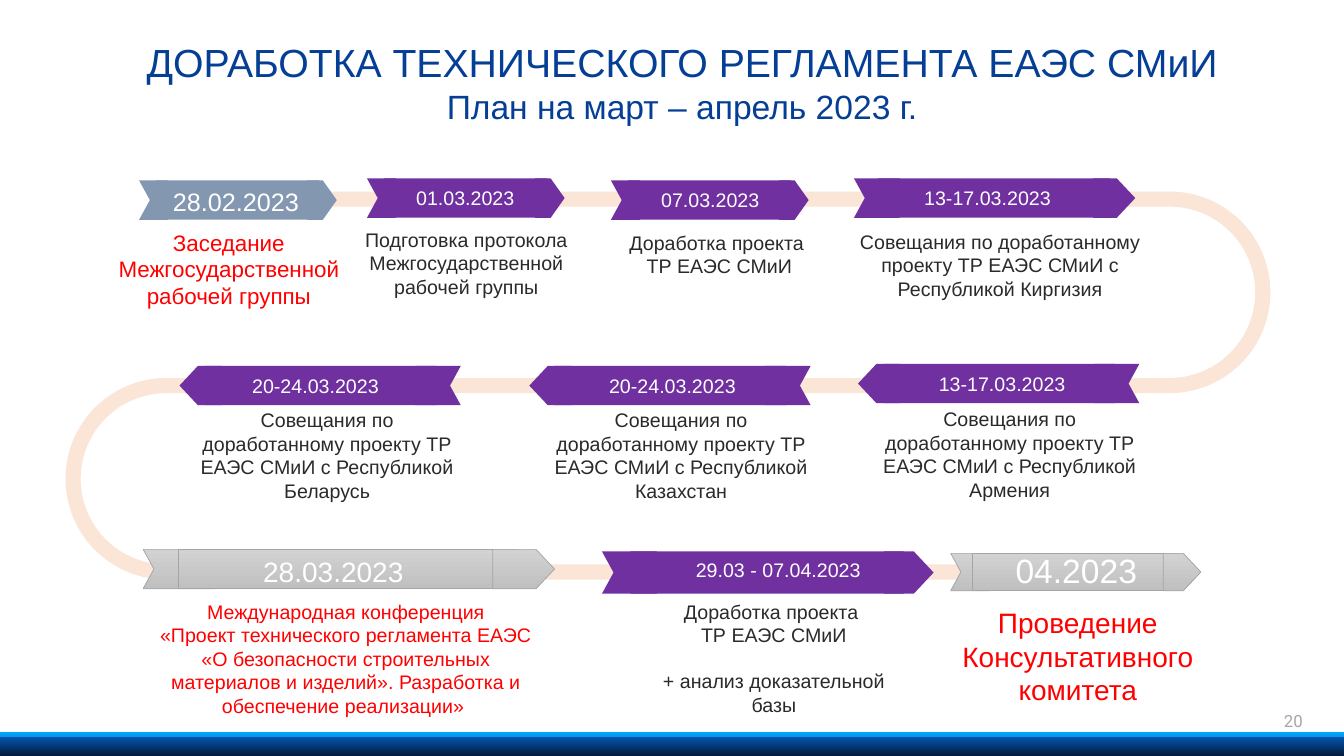
import math

import pptx
import pptx.dml.color
import pptx.enum.shapes
import pptx.enum.text
import pptx.util

PX = 9144  # EMU in one px, 100 px to the inch
SHAPE = pptx.enum.shapes.MSO_SHAPE
ALIGN = pptx.enum.text.PP_ALIGN
ANCHOR = pptx.enum.text.MSO_ANCHOR

NAVY, WHITE, INK, RED = "053E95", "FFFFFF", "292A2B", "FF0000"
PURPLE, STEEL, PEACH = "7030A0", "8497B0", "FBE5D6"
SILVER, SILVER_LINE = ("D2D2D2", "C0C0C0"), "A5A5A5"

DATE = {"size": 14, "color": WHITE}
PLAIN = {"size": 14, "color": INK}
MEETING = "Совещания по доработанному проекту ТР ЕАЭС СМиИ с Республикой "
REVISION = ["Доработка проекта ", "ТР ЕАЭС СМиИ"]

# banner box, fill, points left, then texts: (box relative to the banner, paragraphs, format)
STEPS = [
    ((138, 179, 196, 39), STEEL, False, [
        ((4, 1, 184, 40), ["28.02.2023"], {"size": 18, "color": WHITE}),
        ((-43, 43, 264, 91), ["Заседание", "Межгосударственной рабочей группы"],
         {"size": 16, "color": RED})]),
    ((364, 177, 196, 39), PURPLE, False, [
        ((28, 3, 139, 34), ["01.03.2023"], DATE),
        ((-27, 44, 251, 81),
         ["Подготовка протокола Межгосударственной рабочей группы"], PLAIN)]),
    ((606, 179, 196, 39), PURPLE, False, [
        ((29, 3, 139, 34), ["07.03.2023"], DATE),
        ((-18, 45, 251, 57), REVISION, PLAIN)]),
    ((847, 177, 279, 39), PURPLE, False, [
        ((15, 3, 235, 34), ["13-17.03.2023"], DATE),
        ((-17, 46, 324, 81), [MEETING + "Киргизия"], PLAIN)]),
    ((851, 361, 279, 39), PURPLE, True, [
        ((28, 3, 230, 34), ["13-17.03.2023"], DATE),
        ((4, 38, 293, 104), [MEETING + "Армения"], PLAIN)]),
    ((525, 363, 279, 39), PURPLE, True, [
        ((27, 3, 230, 34), ["20-24.03.2023"], DATE),
        ((4, 37, 293, 104), [MEETING + "Казахстан"], PLAIN)]),
    ((178, 363, 279, 39), PURPLE, True, [
        ((20, 3, 230, 34), ["20-24.03.2023"], DATE),
        ((0, 37, 293, 104), [MEETING + "Беларусь"], PLAIN)]),
    ((142, 545, 408, 39), SILVER, False, [
        ((8, 0, 369, 44), ["28.03.2023 "], {"size": 20, "color": WHITE}),
        ((-5, 45, 412, 128),
         ["Международная конференция",
          "«Проект технического регламента ЕАЭС «О безопасности строительных "
          "материалов и изделий». Разработка и обеспечение реализации» "],
         {"size": 14, "color": RED})]),
    ((597, 547, 329, 42), PURPLE, False, [
        ((33, 2, 284, 34), ["29.03 - 07.04.2023"], DATE),
        ((45, 43, 251, 57), REVISION, PLAIN),
        ((45, 112, 251, 57), ["+ анализ доказательной базы"], PLAIN)]),
    ((943, 549, 248, 37), SILVER, False, [
        ((16, -8, 217, 50), ["04.2023"], {"size": 24, "color": WHITE}),
        ((-16, 47, 284, 111), ["Проведение", "Консультативного комитета"],
         {"size": 20, "color": RED})]),
]


def rgb(value):
    return pptx.dml.color.RGBColor.from_string(value)


def emu(box):
    return [round(length * PX) for length in box]


def format_run(run, size, color, name="Arial"):
    run.font.color.rgb = rgb(color)
    values = {"size": pptx.util.Pt(size), "name": name, "bold": False}
    for attribute, value in values.items():
        setattr(run.font, attribute, value)


def paint(shape, fill, line=None):
    """Fill with one colour, or with a (top, bottom) pair as a gradient."""
    shape.shadow.inherit = False
    if isinstance(fill, tuple):
        shape.fill.gradient()
        shape.fill.gradient_angle = 270
        for stop, color in zip(shape.fill.gradient_stops, fill):
            stop.color.rgb = rgb(color)
    else:
        shape.fill.solid()
        shape.fill.fore_color.rgb = rgb(fill)
    if line:
        shape.line.color.rgb = rgb(line)
        shape.line.width = pptx.util.Pt(0.5)
    else:
        shape.line.fill.background()


def add_text(slide, box, paragraphs, text_format, alignment=ALIGN.CENTER, anchor=ANCHOR.TOP):
    frame = slide.shapes.add_textbox(*emu(box)).text_frame
    frame.word_wrap = True
    frame.vertical_anchor = anchor
    for index, text in enumerate(paragraphs):
        paragraph = frame.add_paragraph() if index else frame.paragraphs[0]
        paragraph.alignment = alignment
        run = paragraph.add_run()
        run.text = text
        format_run(run, **text_format)


def add_footer(slide, box):
    """Two overlapping gradient bars."""
    left, top, width, height = box
    for offset, colors in ((0, ("03ACFC", "0156B0")), (5, ("0156B0", "051A3D"))):
        bar = slide.shapes.add_shape(
            SHAPE.RECTANGLE, *emu((left, top + offset, width, height - 5)))
        paint(bar, colors)


def add_title(slide, box):
    title = slide.shapes.title
    for attribute, value in zip(("left", "top", "width", "height"), emu(box)):
        setattr(title, attribute, value)
    frame = title.text_frame
    frame.auto_size = pptx.enum.text.MSO_AUTO_SIZE.NONE
    frame.vertical_anchor = ANCHOR.MIDDLE
    paragraph = frame.paragraphs[0]
    paragraph.alignment = ALIGN.CENTER
    heading = paragraph.add_run()
    heading.text = "ДОРАБОТКА ТЕХНИЧЕСКОГО РЕГЛАМЕНТА ЕАЭС СМиИ"
    paragraph.add_line_break()
    subheading = paragraph.add_run()
    subheading.text = "План на март – апрель 2023 г."
    format_run(heading, 28, NAVY)
    format_run(subheading, 24, NAVY)


def arc(center_x, center_y, radius, start, end):
    steps = 48
    angles = [math.radians(start + (end - start) * i / steps) for i in range(steps + 1)]
    return [(center_x + radius * math.cos(a), center_y + radius * math.sin(a)) for a in angles]


def add_road(slide, box, thickness=15):
    """A band that runs right, turns back left, then turns right again."""
    left, top, width, height = box
    half = thickness / 2
    radius = (height - thickness) / 4
    right_turn = left + width - radius - half
    left_turn = left + radius + half
    first_row = top + half

    def edge(offset):
        return ([(left + 90, first_row - offset)]
                + arc(right_turn, first_row + radius, radius + offset, -90, 90)
                + arc(left_turn, first_row + 3 * radius, radius - offset, -90, -270)
                + [(left + 1104, first_row + 4 * radius - offset)])

    points = [emu(point) for point in edge(half) + edge(-half)[::-1]]
    builder = slide.shapes.build_freeform(*points[0])
    builder.add_line_segments(points[1:], close=True)
    paint(builder.convert_to_shape(), PEACH)


def add_banner(slide, box, fill, points_left):
    """Notched tail, body and arrow tip, as shares of the banner's width."""
    left, top, width, height = box
    group = slide.shapes.add_group_shape()
    parts = ((SHAPE.CHEVRON, 0, 0.2, 0.274), (SHAPE.RECTANGLE, 0.086, 0.824, None),
             (SHAPE.PENTAGON, 0.85, 0.15, 0.469))
    for kind, start, share, adjustment in parts:
        if points_left:
            start = 1 - start - share
        part = group.shapes.add_shape(
            kind, *emu((left + start * width, top, share * width, height)))
        part.rotation = 180 if points_left else 0
        if adjustment:
            part.adjustments[0] = adjustment
        paint(part, fill, SILVER_LINE if fill == SILVER else None)


def add_step(slide, box, fill, points_left, texts):
    add_banner(slide, box, fill, points_left)
    for (x, y, width, height), paragraphs, text_format in texts:
        add_text(slide, (box[0] + x, box[1] + y, width, height), paragraphs, text_format)


def main():
    presentation = pptx.Presentation()
    presentation.slide_width, presentation.slide_height = emu((1333, 750))
    slide = presentation.slides.add_slide(presentation.slide_layouts[5])
    add_footer(slide, (0, 726, 1333, 24))
    add_title(slide, (49, 15, 1255, 133))
    add_road(slide, (65, 190, 1195, 385))
    for step in STEPS:
        add_step(slide, *step)
    # Slide number
    add_text(slide, (1002, 695, 300, 40), ["20"],
             {"size": 12, "color": "A6A6A6", "name": "Roboto"}, ALIGN.RIGHT, ANCHOR.MIDDLE)
    presentation.save("out.pptx")


if __name__ == "__main__":
    main()
